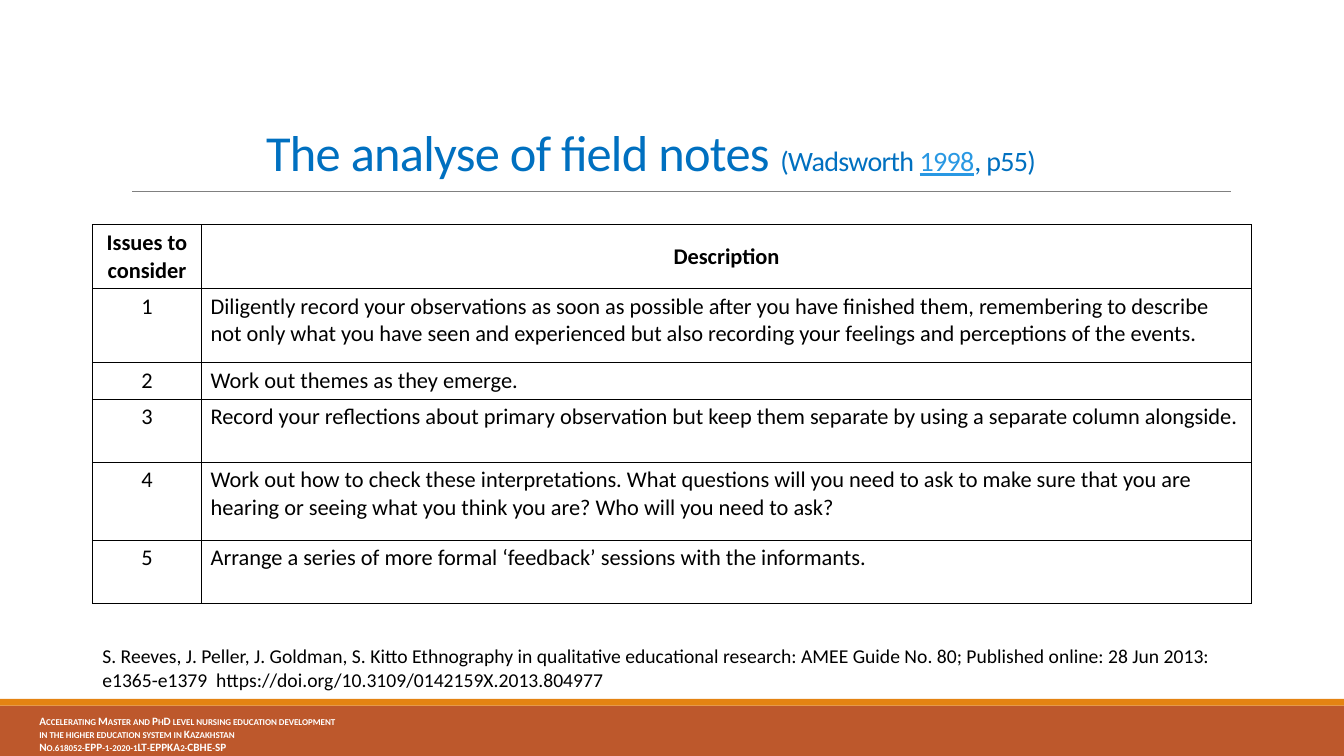
from dataclasses import dataclass
from lxml.etree import SubElement
from pptx import Presentation
from pptx.dml.color import RGBColor as RGB
from pptx.enum.shapes import MSO_CONNECTOR as CONN, MSO_SHAPE as SHAPE
from pptx.enum.text import MSO_ANCHOR as ANCHOR, MSO_AUTO_SIZE as AUTO, PP_ALIGN as ALIGN
from pptx.oxml.ns import qn
from pptx.util import Inches, Pt


@dataclass(frozen=True)
class Theme:
    font: str = "Calibri"
    ink: str = "000000"
    paper: str = "FFFFFF"
    title: str = "0070C0"
    year: str = "2998E3"
    band: str = "BD582C"
    stripe: str = "E48312"
    rule: str = "808080"
    title_size: int = 36
    cite_size: int = 20
    table_size: int = 16
    source_size: int = 14
    footer_size: int = 8


TITLE = "The analyse of field notes "
CITATION = ("(Wadsworth\u00a0", "1998", ", p55)")
HEADER = ("Issues to consider", "Description")
ISSUES = (
    "Diligently record your observations as soon as possible after you have finished them, "
    "remembering to describe not only what you have seen and experienced but also recording "
    "your feelings and perceptions of the events.",
    "Work out themes as they emerge.",
    "Record your reflections about primary observation but keep them separate by using a "
    "separate column alongside.",
    "Work out how to check these interpretations. What questions will you need to ask to make "
    "sure that you are hearing or seeing what you think you are? Who will you need to ask?",
    "Arrange a series of more formal ‘feedback’ sessions with the informants.",
)
SOURCE = (
    "S. Reeves,\u00a0J. Peller,\u00a0J. Goldman, S. Kitto Ethnography in qualitative educational "
    "research: AMEE Guide No. 80; Published online: 28 Jun 2013: e1365-e1379 "
    "\u00a0https://doi.org/10.3109/0142159X.2013.804977"
)
PROJECT = (
    "Accelerating Master and PhD level nursing education development",
    "in the higher education system in Kazakhstan",
    "No.618052-EPP-1-2020-1LT-EPPKA2-CBHE-SP",
)
COLS, ROWS = 160, 90
EDGES = ("a:lnL", "a:lnR", "a:lnT", "a:lnB")


def assign(target, **values):
    for name, value in values.items():
        setattr(target, name, value)


class SlideBuilder:
    """Draws on one slide; lengths are columns and rows of a 160 by 90 grid."""

    def __init__(self, prs, theme):
        self.theme = theme
        self.col, self.row = prs.slide_width / COLS, prs.slide_height / ROWS
        self.s = prs.slides.add_slide(prs.slide_layouts[5])

    def box(self, x, y, w, h):
        return [round(v * u) for v, u in zip((x, y, w, h), (self.col, self.row) * 2)]

    def run(self, p, text, size, color, attrs=None, **font):
        r = p.add_run()
        r.text = text
        assign(r.font, name=self.theme.font, size=Pt(size), **font)
        r.font.color.rgb = RGB.from_string(color)
        for name, value in (attrs or {}).items():
            r.font._element.set(name, value)

    def bar(self, color, *at):
        sp = self.s.shapes.add_shape(SHAPE.RECTANGLE, *self.box(*at))
        sp.shadow.inherit = False
        sp.fill.solid()
        sp.fill.fore_color.rgb = RGB.from_string(color)
        sp.line.fill.background()

    def rule(self, x1, x2, y):
        ln = self.s.shapes.add_connector(CONN.STRAIGHT, *self.box(x1, y, x2, y))
        ln.line.color.rgb = RGB.from_string(self.theme.rule)
        ln.line.width = Pt(0.5)
        SubElement(ln._element.spPr, qn("a:effectLst"))

    def title(self, runs, *at):
        sp = self.s.shapes.title
        assign(sp, **dict(zip(("left", "top", "width", "height"), self.box(*at))))
        tf = sp.text_frame
        assign(tf, word_wrap=True, auto_size=AUTO.NONE, vertical_anchor=ANCHOR.BOTTOM)
        p = tf.paragraphs[0]
        assign(p, alignment=ALIGN.CENTER, line_spacing=0.85)
        for text, size, color, underline in runs:
            self.run(p, text, size, color, {"spc": "-50"}, underline=underline)

    def text(self, lines, size, color, *at, attrs=None, **font):
        tf = self.s.shapes.add_textbox(*self.box(*at)).text_frame
        tf.word_wrap = True
        for i, line in enumerate(lines):
            p = tf.add_paragraph() if i else tf.paragraphs[0]
            self.run(p, line, size, color, attrs, **font)

    def cell(self, cell, text, header, centred):
        t = self.theme
        side, end = Inches(0.09), Inches(0.04)
        assign(cell, margin_left=side, margin_right=side, margin_top=end, margin_bottom=end,
               vertical_anchor=ANCHOR.MIDDLE if header else ANCHOR.TOP)
        p = cell.text_frame.paragraphs[0]
        p.alignment = ALIGN.CENTER if centred else ALIGN.LEFT
        self.run(p, text, t.table_size, t.ink, bold=header)
        tc_pr = cell._tc.get_or_add_tcPr()
        for edge in EDGES:
            ln = SubElement(tc_pr, qn(edge), w=str(Pt(0.75)))
            SubElement(SubElement(ln, qn("a:solidFill")), qn("a:srgbClr"), val=t.ink)
        cell.fill.solid()
        cell.fill.fore_color.rgb = RGB.from_string(t.paper)

    def table(self, rows, x, y, widths, heights):
        at = self.box(x, y, sum(widths), sum(heights))
        tbl = self.s.shapes.add_table(len(rows), len(widths), *at).table
        assign(tbl, first_row=False, horz_banding=False)
        for column, w in zip(tbl.columns, widths):
            column.width = round(w * self.col)
        for i, (values, h) in enumerate(zip(rows, heights)):
            tbl.rows[i].height = round(h * self.row)
            for j, value in enumerate(values):
                self.cell(tbl.cell(i, j), value, header=i == 0, centred=i == 0 or j == 0)


def main():
    prs = Presentation()
    assign(prs, slide_width=Inches(13.33), slide_height=Inches(7.5))
    t = Theme()
    b = SlideBuilder(prs, t)

    b.bar(t.band, 0, 84, COLS, 6)
    b.bar(t.stripe, 0, 83.2, COLS, 0.8)
    b.rule(15.75, 146.5, 22.8)
    b.text(PROJECT, t.footer_size, t.paper, 3.5, 84.4, 55, 5, attrs={"cap": "small"}, bold=True)

    before, year, after = CITATION
    b.title([(TITLE, t.title_size, t.title, False), (before, t.cite_size, t.title, False),
             (year, t.cite_size, t.year, True), (after, t.cite_size, t.title, False)],
            3.5, 12.75, 148, 9.5)
    rows = [HEADER, *((str(n), issue) for n, issue in enumerate(ISSUES, 1))]
    b.table(rows, 11, 26.75, (13, 125), (7.65, 8.8, 4.35, 7.5, 9.25, 7.5))
    b.text([SOURCE], t.source_size, t.ink, 11, 76.1, 138, 6.8)
    prs.save("out.pptx")


if __name__ == "__main__":
    main()
